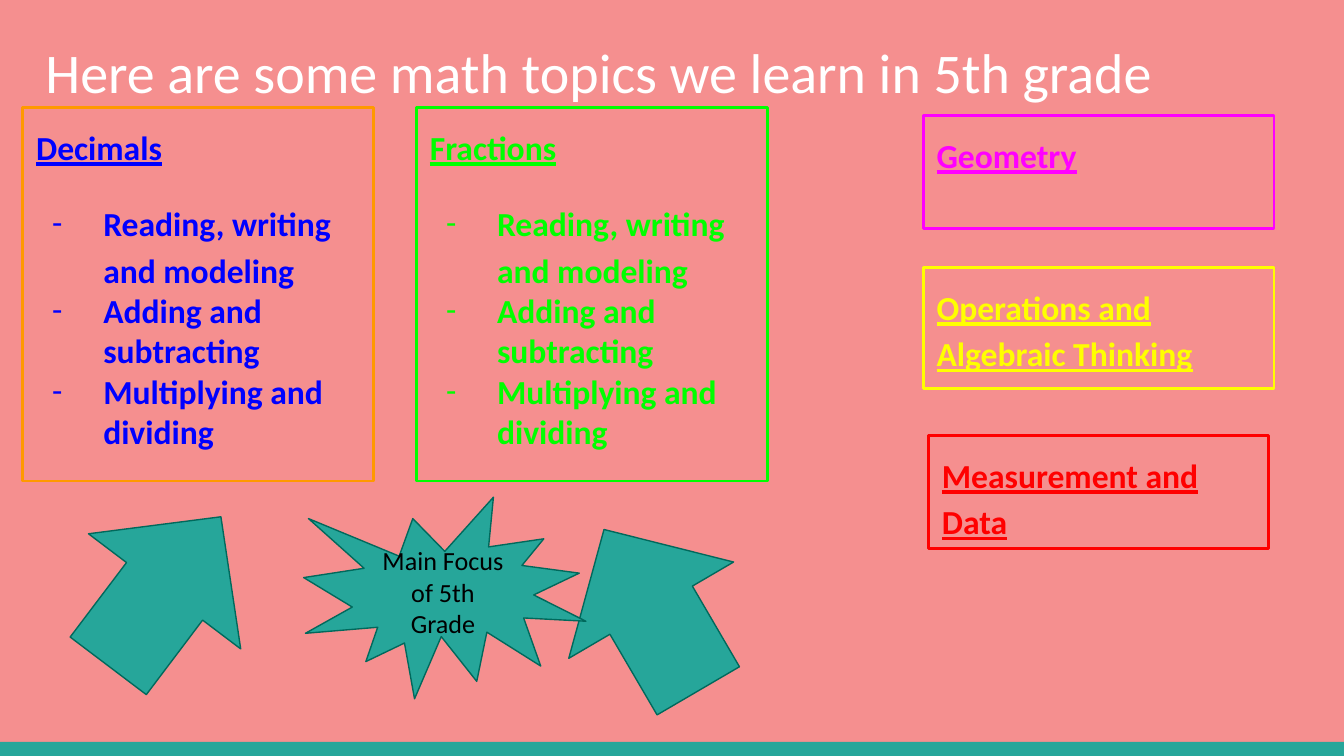
"""Build the slide of fifth-grade math topics."""
from lxml import etree
from pptx import Presentation
from pptx.dml.color import RGBColor
from pptx.enum import shapes, text
from pptx.oxml.ns import qn
from pptx.util import Inches, Pt

COLORS = {
    "bg": "F58F8F", "teal": "26A69A", "dark_teal": "00695C",
    "white": "FFFFFF", "black": "000000", "orange": "FF9900",
    "blue": "0000FF", "green": "00FF00", "magenta": "FF00FF",
    "red": "FF0000", "yellow": "FFFF00",
}
FONT = "Calibri"
TITLE = "Here are some math topics we learn in 5th grade"
SKILLS = ["Reading, writing and modeling", "Adding and subtracting",
          "Multiplying and dividing"]
TOPICS = [
    ("Decimals", SKILLS, (0.17, 0.8, 2.61, 2.78), "orange", "blue"),
    ("Fractions", SKILLS, (3.1, 0.8, 2.61, 2.78), "green", "green"),
    ("Geometry", [], (6.87, 0.86, 2.61, 0.84), "magenta", "magenta"),
    ("Measurement and Data", [], (6.91, 3.24, 2.53, 0.84), "red", "red"),
    ("Operations and Algebraic Thinking", [], (6.87, 1.99, 2.61, 0.9),
     "yellow", "yellow"),
]
ARROWS = [((0.53, 3.69, 1.39, 1.42), 307.1), ((4.15, 3.83, 1.39, 1.42), 239.7)]
FOCUS = "Main Focus of 5th Grade"
WIDTH = 10
HEIGHT = WIDTH * 9 / 16


def rgb(name):
    return RGBColor.from_string(COLORS[name])


def add_shape(s, kind, box, fill=None, line=None, width=0.75):
    sp = s.shapes.add_shape(kind, *map(Inches, box))
    sp.shadow.inherit = False
    if fill:
        sp.fill.solid()
        sp.fill.fore_color.rgb = rgb(fill)
    else:
        sp.fill.background()
    if line:
        sp.line.color.rgb = rgb(line)
        sp.line.width = Pt(width)
    else:
        sp.line.fill.background()
    return sp


def set_frame(sp, anchor):
    tf = sp.text_frame
    tf.word_wrap = True
    tf.vertical_anchor = anchor
    tf.margin_left = tf.margin_right = Inches(0.1)
    tf.margin_top = tf.margin_bottom = Inches(0.1)
    return tf


def add_run(p, words, size, color, bold=False, underline=False,
            align=text.PP_ALIGN.LEFT):
    p.alignment = align
    r = p.add_run()
    r.text = words
    r.font.name, r.font.size = FONT, Pt(size)
    r.font.bold, r.font.underline = bold, underline
    r.font.color.rgb = rgb(color)


def add_dash(p, color):
    pPr = p._p.get_or_add_pPr()
    pPr.set("marL", str(Inches(0.5)))
    pPr.set("indent", str(Inches(-0.38)))
    clr = etree.SubElement(pPr, qn("a:buClr"))
    etree.SubElement(clr, qn("a:srgbClr"), val=COLORS[color])
    etree.SubElement(pPr, qn("a:buFont"), typeface=FONT)
    etree.SubElement(pPr, qn("a:buChar"), char="-")


def add_topic(s, heading, skills, box, border, color):
    sp = add_shape(s, shapes.MSO_SHAPE.RECTANGLE, box, line=border, width=1.5)
    tf = set_frame(sp, text.MSO_ANCHOR.TOP)
    p = tf.paragraphs[0]
    p.line_spacing = 1.15
    add_run(p, heading, 18, color, bold=True, underline=True)
    for i, skill in enumerate(skills):
        p = tf.add_paragraph()
        if i == 0:
            p.line_spacing, p.space_before = 1.15, Pt(16)
        add_dash(p, color)
        add_run(p, skill, 18, color, bold=True)


def main():
    prs = Presentation()
    prs.slide_width, prs.slide_height = Inches(WIDTH), Inches(HEIGHT)
    s = prs.slides.add_slide(prs.slide_layouts[6])
    s.background.fill.solid()
    s.background.fill.fore_color.rgb = rgb("bg")
    add_shape(s, shapes.MSO_SHAPE.RECTANGLE, (0, 5.52, WIDTH, 0.11), "teal")

    title = s.shapes.add_textbox(*map(Inches, (0.24, 0.18, 9.7, 5.21)))
    tf = set_frame(title, text.MSO_ANCHOR.TOP)
    add_run(tf.paragraphs[0], TITLE, 30, "white")

    for topic in TOPICS:
        add_topic(s, *topic)
    for box, angle in ARROWS:
        arrow = add_shape(s, shapes.MSO_SHAPE.RIGHT_ARROW, box, "teal", "dark_teal")
        arrow.rotation = angle

    burst = add_shape(s, shapes.MSO_SHAPE.EXPLOSION1, (2.26, 3.7, 2.1, 1.5),
                      "teal", "dark_teal")
    p = set_frame(burst, text.MSO_ANCHOR.MIDDLE).paragraphs[0]
    add_run(p, FOCUS, 14, "black", align=text.PP_ALIGN.CENTER)
    prs.save("out.pptx")


if __name__ == "__main__":
    main()
